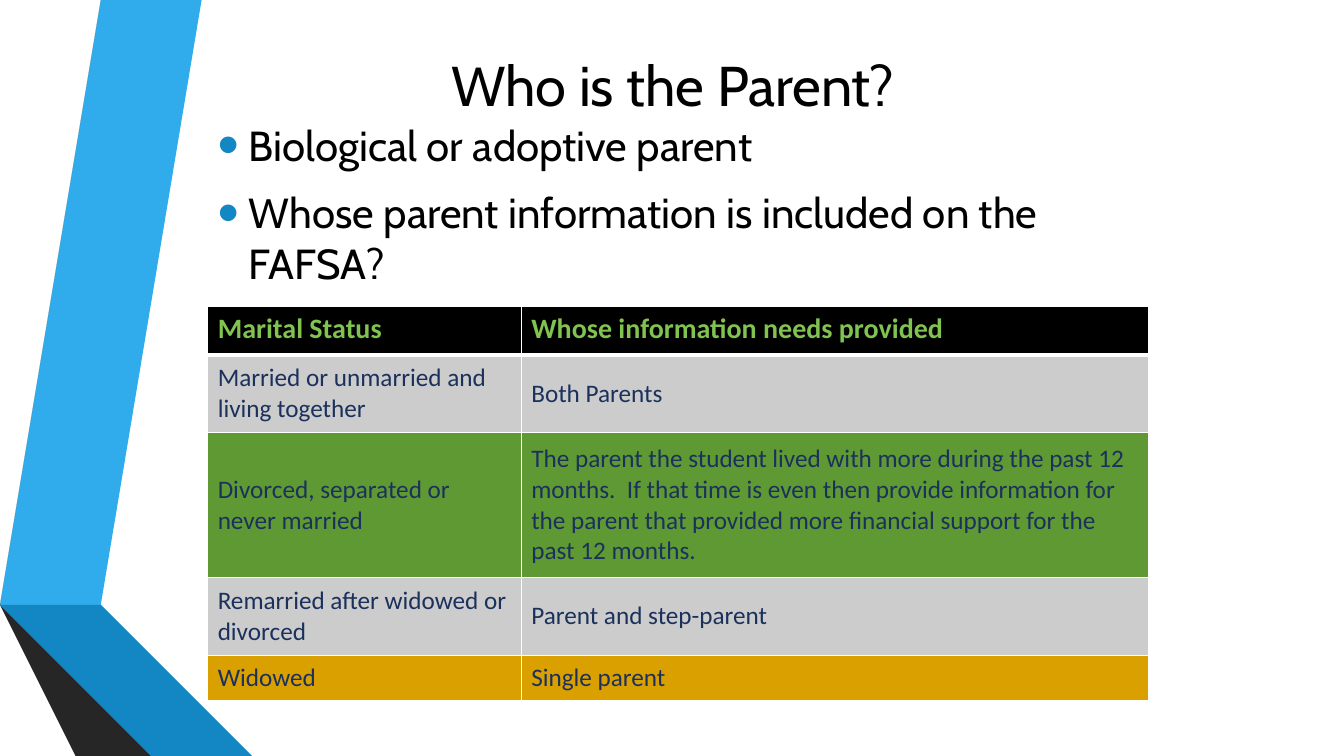
from lxml import etree
from pptx import Presentation
from pptx import util as u
from pptx.dml import color
from pptx.enum import text
from pptx.oxml import ns

RIBBONS = [
    ("30ACEC", [(0.5, 5.78), (0.77, 5.83), (1.73, 0), (1.45, 0)]),
    ("595959", [(1.39, 0), (1.11, 0), (0.16, 5.73), (0.44, 5.77)]),
    ("262626", [(0.16, 5.73), (1.45, 7.5), (1.51, 7.5)]),
    ("0C5A82", [(0.5, 5.79), (2.08, 7.5), (2.14, 7.5)]),
    ("1287C3", [(0.5, 5.79), (2.14, 7.5), (2.83, 7.5), (0.77, 5.83), (0.5, 5.78)]),
    ("404040", [(2.02, 7.5), (0.48, 5.83), (0.44, 5.77), (0.16, 5.73), (1.51, 7.5)]),
]
BULLETS = [
    "Biological or adoptive parent",
    "Whose parent information is included on the FAFSA?",
]
COLUMNS = [3.11, 6.22]
ROWS = [
    (0.48, "000000", "Marital Status", "Whose information needs provided"),
    (0.77, "CCCCCC", "Married or unmarried and living together", "Both Parents"),
    (1.44, "5F9934", "Divorced, separated or never married",
     "The parent the student lived with more during the past 12 months.  "
     "If that time is even then provide information for the parent that "
     "provided more financial support for the past 12 months."),
    (0.77, "CCCCCC", "Remarried after widowed or divorced", "Parent and step-parent"),
    (0.45, "DAA000", "Widowed", "Single parent"),
]


def rgb(value):
    return color.RGBColor.from_string(value)


def apply(target, values):
    for name, value in values.items():
        setattr(target, name, value)


def add_xml(parent, tag, **attributes):
    return etree.SubElement(parent, ns.qn(tag), attributes)


class SlideBuilder:
    heading = {"name": "Cabin", "size": u.Pt(40), "bold": False}
    bullet = {"name": "Cabin", "size": u.Pt(30)}
    header = {"name": "Calibri", "size": u.Pt(20), "bold": True}
    body = {"name": "Calibri", "size": u.Pt(18), "bold": False}
    middle = text.MSO_ANCHOR.MIDDLE

    def __init__(self, deck):
        self.slide = deck.slides.add_slide(deck.slide_layouts[5])

    def place(self, shape, *lengths):
        names = ("left", "top", "width", "height")
        apply(shape, dict(zip(names, map(u.Inches, lengths))))

    def add_span(self, para, words, style, ink):
        span = para.add_run()
        span.text = words
        apply(span.font, style)
        span.font.color.rgb = rgb(ink)

    def polygon(self, fill, points):
        start, *rest = points
        outline = self.slide.shapes.build_freeform(*start, scale=u.Inches(1))
        outline.add_line_segments(rest, close=True)
        shape = outline.convert_to_shape()
        shape.shadow.inherit = False
        shape.fill.solid()
        shape.fill.fore_color.rgb = rgb(fill)
        shape.line.fill.background()

    def title(self, words, *lengths):
        title = self.slide.shapes.title
        self.place(title, *lengths)
        frame = title.text_frame
        apply(frame, {"vertical_anchor": self.middle, "word_wrap": True,
                      "auto_size": text.MSO_AUTO_SIZE.NONE})
        para = frame.paragraphs[0]
        para.alignment = text.PP_ALIGN.CENTER
        self.add_span(para, words, self.heading, "000000")

    def bullets(self, items, *lengths):
        box = self.slide.shapes.add_textbox(*map(u.Inches, lengths))
        frame = box.text_frame
        apply(frame, {"word_wrap": True, "vertical_anchor": self.middle})
        for index, words in enumerate(items):
            para = frame.add_paragraph() if index else frame.paragraphs[0]
            apply(para, {"space_before": u.Pt(6), "space_after": u.Pt(6)})
            props = para._p.get_or_add_pPr()
            indent = u.Inches(0.31)
            props.set("marL", str(indent))
            props.set("indent", str(-indent))
            add_xml(add_xml(props, "a:buClr"), "a:srgbClr", val="1287C3")
            add_xml(props, "a:buSzPct", val="145000")
            add_xml(props, "a:buFont", typeface="Arial")
            add_xml(props, "a:buChar", char="•")
            self.add_span(para, words, self.bullet, "000000")

    def borders(self, cell, bottom):
        props = cell._tc.get_or_add_tcPr()
        for side, width in (("L", 1), ("R", 1), ("T", 1), ("B", bottom)):
            line = add_xml(props, f"a:ln{side}", w=str(u.Pt(width)))
            add_xml(add_xml(line, "a:solidFill"), "a:srgbClr", val="FFFFFF")

    def table(self, columns, rows, left, top):
        height = sum(row[0] for row in rows)
        frame = self.slide.shapes.add_table(
            len(rows), len(columns),
            *map(u.Inches, (left, top, sum(columns), height)))
        table = frame.table
        table.horz_banding = False
        for column, width in zip(table.columns, columns):
            column.width = u.Inches(width)
        for index, (height, fill, *entries) in enumerate(rows):
            is_header = index == 0
            table.rows[index].height = u.Inches(height)
            for cell, words in zip(table.rows[index].cells, entries):
                self.borders(cell, 3 if is_header else 1)
                cell.fill.solid()
                cell.fill.fore_color.rgb = rgb(fill)
                cell.vertical_anchor = text.MSO_ANCHOR.TOP if is_header else self.middle
                self.add_span(cell.text_frame.paragraphs[0], words,
                              self.header if is_header else self.body,
                              "80C34F" if is_header else "1B315C")


def main():
    deck = Presentation()
    apply(deck, {"slide_width": u.Inches(13.33), "slide_height": u.Inches(7.5)})
    page = SlideBuilder(deck)
    for fill, points in RIBBONS:
        page.polygon(fill, points)
    page.title("Who is the Parent?", 0.92, 0.4, 11.5, 0.86)
    page.bullets(BULLETS, 2.06, 1.12, 9.01, 1.8)
    page.table(COLUMNS, ROWS, 2.06, 3.04)
    deck.save("out.pptx")


if __name__ == "__main__":
    main()
